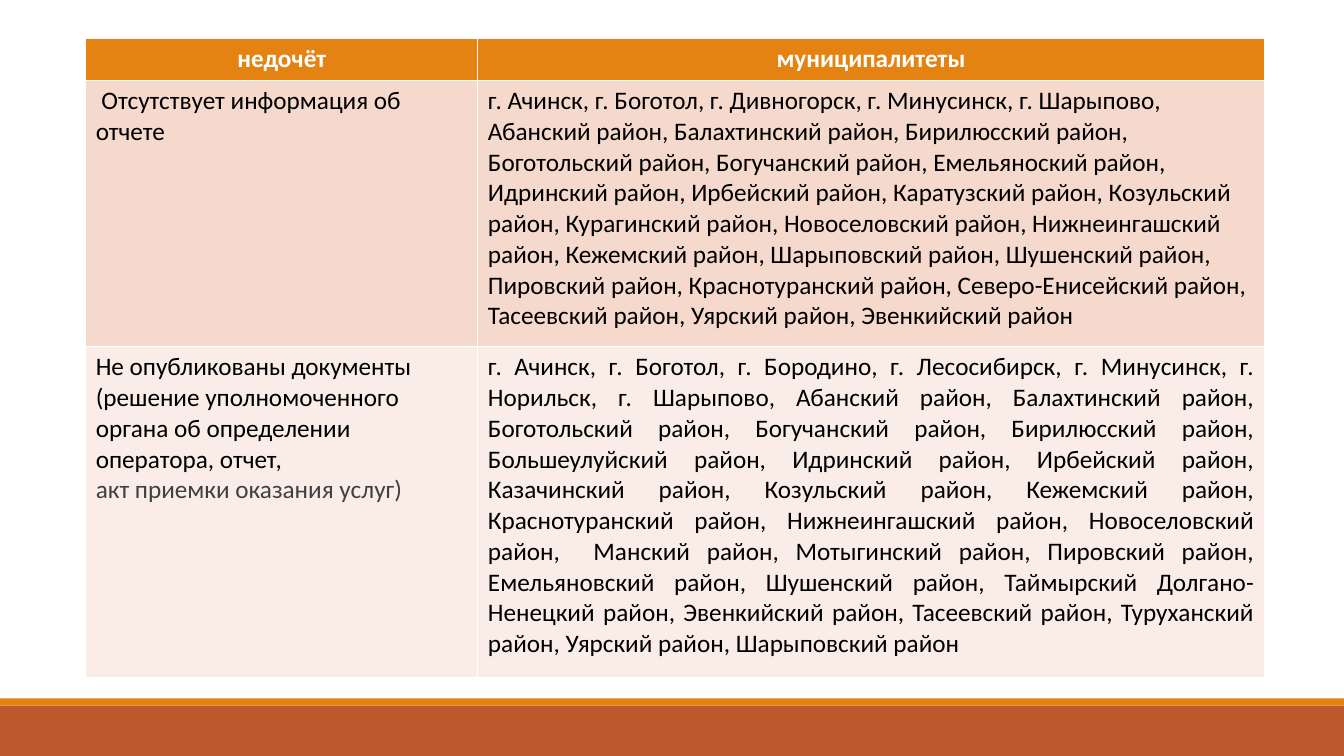
from pptx import Presentation
from pptx.dml.color import RGBColor
from pptx.enum.shapes import MSO_SHAPE
from pptx.enum.text import PP_ALIGN
from pptx.util import Inches, Pt

COLORS = {
    "orange": "E48312",
    "rust": "BD582C",
    "band_dark": "F5D9CC",
    "band_light": "FAEDE7",
    "white": "FFFFFF",
    "black": "000000",
    "gray": "404040",
}
FONT, SIZE = "Calibri", 18

BARS = [(7, 0.5, "rust"), (6.93, 0.07, "orange")]

LEFT, TOP = 0.85, 0.38
COL_WIDTHS = [3.89, 7.8]
ROW_HEIGHTS = [0.42, 2.64, 3.28]
ROW_FILLS = ["orange", "band_dark", "band_light"]

NO_REPORT = (
    "г. Ачинск, г. Боготол, г. Дивногорск, г. Минусинск, г. Шарыпово, "
    "Абанский район, Балахтинский район, Бирилюсский район, "
    "Боготольский район, Богучанский район, Емельяноский район, "
    "Идринский район, Ирбейский район, Каратузский район, Козульский район, "
    "Курагинский район, Новоселовский район, Нижнеингашский район, "
    "Кежемский район, Шарыповский район, Шушенский район, Пировский район, "
    "Краснотуранский район, Северо-Енисейский район, Тасеевский район, "
    "Уярский район, Эвенкийский район"
)
NO_DOCUMENTS = (
    "г. Ачинск, г. Боготол, г. Бородино, г. Лесосибирск, г. Минусинск, "
    "г. Норильск, г. Шарыпово, Абанский район, Балахтинский район, "
    "Боготольский район, Богучанский район, Бирилюсский район, "
    "Большеулуйский район, Идринский район, Ирбейский район, "
    "Казачинский район, Козульский район, Кежемский район, "
    "Краснотуранский район, Нижнеингашский район, Новоселовский район,  "
    "Манский район, Мотыгинский район, Пировский район, "
    "Емельяновский район, Шушенский район, Таймырский Долгано-Ненецкий район, "
    "Эвенкийский район, Тасеевский район, Туруханский район, Уярский район, "
    "Шарыповский район"
)
ROWS = [
    [
        [("недочёт", "white", PP_ALIGN.CENTER)],
        [("муниципалитеты", "white", PP_ALIGN.CENTER)],
    ],
    [
        [(" Отсутствует информация об отчете", "black", PP_ALIGN.LEFT)],
        [(NO_REPORT, "black", PP_ALIGN.LEFT)],
    ],
    [
        [
            ("Не опубликованы документы (решение уполномоченного органа "
             "об определении оператора, отчет,", "black", PP_ALIGN.LEFT),
            ("акт приемки оказания услуг)", "gray", PP_ALIGN.LEFT),
        ],
        [(NO_DOCUMENTS, "black", PP_ALIGN.JUSTIFY)],
    ],
]


def paint(fill, color):
    fill.solid()
    fill.fore_color.rgb = RGBColor.from_string(COLORS[color])


def add_bar(slide, top, height, color):
    s = slide.shapes.add_shape(
        MSO_SHAPE.RECTANGLE, 0, Inches(top), prs.slide_width, Inches(height))
    s.shadow.inherit = False
    s.line.fill.background()
    paint(s.fill, color)


def fill_cell(cell, paragraphs, color, bold):
    paint(cell.fill, color)
    tf = cell.text_frame
    for i, (text, ink, align) in enumerate(paragraphs):
        p = tf.add_paragraph() if i else tf.paragraphs[0]
        p.alignment = align
        r = p.add_run()
        r.text = text
        r.font.name = FONT
        r.font.size = Pt(SIZE)
        r.font.bold = bold
        r.font.color.rgb = RGBColor.from_string(COLORS[ink])


prs = Presentation()
prs.slide_width, prs.slide_height = Inches(13.33), Inches(7.5)
slide = prs.slides.add_slide(prs.slide_layouts[6])

for bar in BARS:
    add_bar(slide, *bar)

table = slide.shapes.add_table(
    len(ROWS), len(COL_WIDTHS), Inches(LEFT), Inches(TOP),
    Inches(sum(COL_WIDTHS)), Inches(sum(ROW_HEIGHTS))).table
for column, width in zip(table.columns, COL_WIDTHS):
    column.width = Inches(width)
for i, (height, color, cells) in enumerate(zip(ROW_HEIGHTS, ROW_FILLS, ROWS)):
    table.rows[i].height = Inches(height)
    for j, paragraphs in enumerate(cells):
        fill_cell(table.cell(i, j), paragraphs, color, i == 0)

prs.save("out.pptx")
